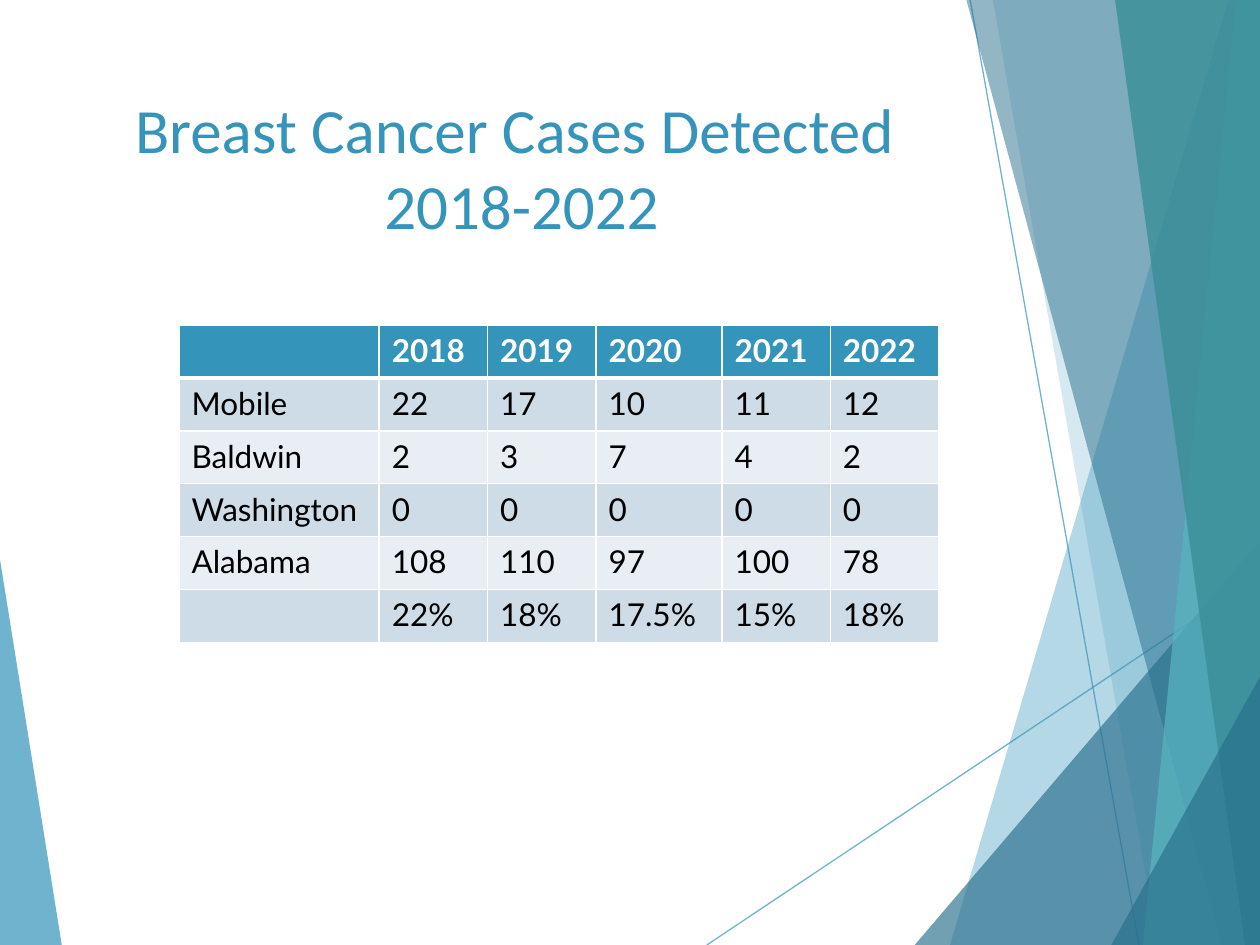
from dataclasses import dataclass

from lxml.etree import SubElement
from pptx import Presentation
from pptx.dml.color import RGBColor as Rgb
from pptx.enum.shapes import MSO_CONNECTOR as Connector
from pptx.enum.text import MSO_ANCHOR as Anchor, PP_ALIGN as Align
from pptx.oxml.ns import qn
from pptx.util import Inches, Pt

COLUMNS, ROWS = 10, 7.5  # page grid of square cells


@dataclass(frozen=True)
class Theme:
    blue: str = "3494BA"
    deep_blue: str = "276F8B"
    aqua: str = "58B6C0"
    teal: str = "3A8F98"
    white: str = "FFFFFF"
    black: str = "000000"
    bands: tuple = ("CEDCE7", "E8EEF3")
    title_font: str = "Calibri"
    table_font: str = "Lato"
    title_size: int = 36
    table_size: int = 18
    hairline: float = 0.75
    cell_line: int = 1
    header_line: int = 3


class SlideBuilder:
    def __init__(self, deck, theme):
        self.theme = theme
        self.cell = deck.slide_width / COLUMNS
        self.page = deck.slides.add_slide(deck.slide_layouts[5])

    def grid(self, *cells):
        return [round(count * self.cell) for count in cells]

    def set_opacity(self, fill, percent):
        color = fill._xPr.find(qn("a:solidFill"))[0]
        SubElement(color, qn("a:alpha"), val=str(percent * 1000))

    def polygon(self, points, color, opacity):
        start, *rest = [self.grid(*point) for point in points]
        outline = self.page.shapes.build_freeform(*start)
        outline.add_line_segments(rest, close=True)
        shape = outline.convert_to_shape()
        shape.shadow.inherit = False
        shape.line.fill.background()
        shape.fill.solid()
        shape.fill.fore_color.rgb = Rgb.from_string(color)
        self.set_opacity(shape.fill, opacity)

    def panel(self, top, bottom, color, opacity):
        """Fill from a slanted full-height edge to the right side of the page."""
        points = [(top, 0), (bottom, ROWS), (COLUMNS, ROWS), (COLUMNS, 0)]
        self.polygon(points, color, opacity)

    def corner(self, left, top, color, opacity):
        """Fill a triangle in the bottom right corner."""
        self.polygon([(left, ROWS), (COLUMNS, top), (COLUMNS, ROWS)], color, opacity)

    def line(self, start, end, opacity):
        connector = self.page.shapes.add_connector(
            Connector.STRAIGHT, *self.grid(*start, *end))
        connector.line.width = Pt(self.theme.hairline)
        connector.line.color.rgb = Rgb.from_string(self.theme.blue)
        self.set_opacity(connector.line.fill, opacity)
        SubElement(connector._element.spPr, qn("a:effectLst"))

    def format_text(self, para, font, size, color, bold=False):
        for span in para.runs:
            span.font.name = font
            span.font.size = Pt(size)
            span.font.bold = bold
            span.font.color.rgb = Rgb.from_string(color)

    def title(self, text, left, top, width, height):
        box = self.page.shapes.title
        box.left, box.top, box.width, box.height = self.grid(left, top, width, height)
        frame = box.text_frame
        frame.text = text
        frame.word_wrap = True
        frame.vertical_anchor = Anchor.TOP
        para = frame.paragraphs[0]
        para.alignment = Align.CENTER
        theme = self.theme
        self.format_text(para, theme.title_font, theme.title_size, theme.blue)

    def set_borders(self, cell, widths):
        properties = cell._tc.get_or_add_tcPr()
        for side, width in widths.items():
            border = SubElement(properties, qn(f"a:ln{side}"), w=str(Pt(width)))
            fill = SubElement(border, qn("a:solidFill"))
            SubElement(fill, qn("a:srgbClr"), val=self.theme.white)

    def table(self, records, left, top, widths, row_height):
        theme = self.theme
        table = self.page.shapes.add_table(
            len(records), len(widths),
            *self.grid(left, top, sum(widths), row_height * len(records))).table
        for column, width in zip(table.columns, self.grid(*widths)):
            column.width = width
        for row_index, record in enumerate(records):
            header = row_index == 0
            table.rows[row_index].height = self.grid(row_height)[0]
            background = theme.blue if header else theme.bands[(row_index - 1) % 2]
            borders = dict.fromkeys("LRTB", theme.cell_line)
            if header:
                borders["B"] = theme.header_line
            elif row_index == 1:
                borders["T"] = theme.header_line
            for column_index, text in enumerate(record):
                cell = table.cell(row_index, column_index)
                cell.text_frame.text = text
                self.format_text(cell.text_frame.paragraphs[0], theme.table_font,
                                 theme.table_size,
                                 theme.white if header else theme.black, header)
                self.set_borders(cell, borders)
                cell.fill.solid()
                cell.fill.fore_color.rgb = Rgb.from_string(background)


CASES = [
    ["", "2018", "2019", "2020", "2021", "2022"],
    ["Mobile", "22", "17", "10", "11", "12"],
    ["Baldwin", "2", "3", "7", "4", "2"],
    ["Washington", "0", "0", "0", "0", "0"],
    ["Alabama", "108", "110", "97", "100", "78"],
    ["", "22%", "18%", "17.5%", "15%", "18%"],
]


def main():
    deck = Presentation()
    deck.slide_width, deck.slide_height = Inches(COLUMNS), Inches(ROWS)
    theme = Theme()
    slide = SlideBuilder(deck, theme)

    slide.polygon([(0, 4.44), (0.49, ROWS), (0, ROWS)], theme.blue, 70)
    slide.line((5.61, ROWS), (COLUMNS, 4.57), 70)
    slide.line((7.7, 0), (9.04, ROWS), 70)
    slide.panel(9.75, 7.54, theme.blue, 36)
    slide.panel(7.88, 9.19, theme.blue, 20)
    slide.corner(7.26, 4.29, theme.deep_blue, 66)
    slide.panel(7.67, 9.7, theme.deep_blue, 50)
    slide.panel(9.81, 9.07, theme.aqua, 70)
    slide.panel(8.85, 9.88, theme.teal, 82)
    slide.corner(8.82, 5.37, theme.deep_blue, 66)

    slide.table(CASES, 1.42, 2.58, [1.59, 0.86, 0.86, 1, 0.86, 0.86], 0.42)
    slide.title("Breast Cancer Cases Detected \v2018-2022", 0.67, 0.67, 6.94, 1.44)
    deck.save("out.pptx")


if __name__ == "__main__":
    main()
